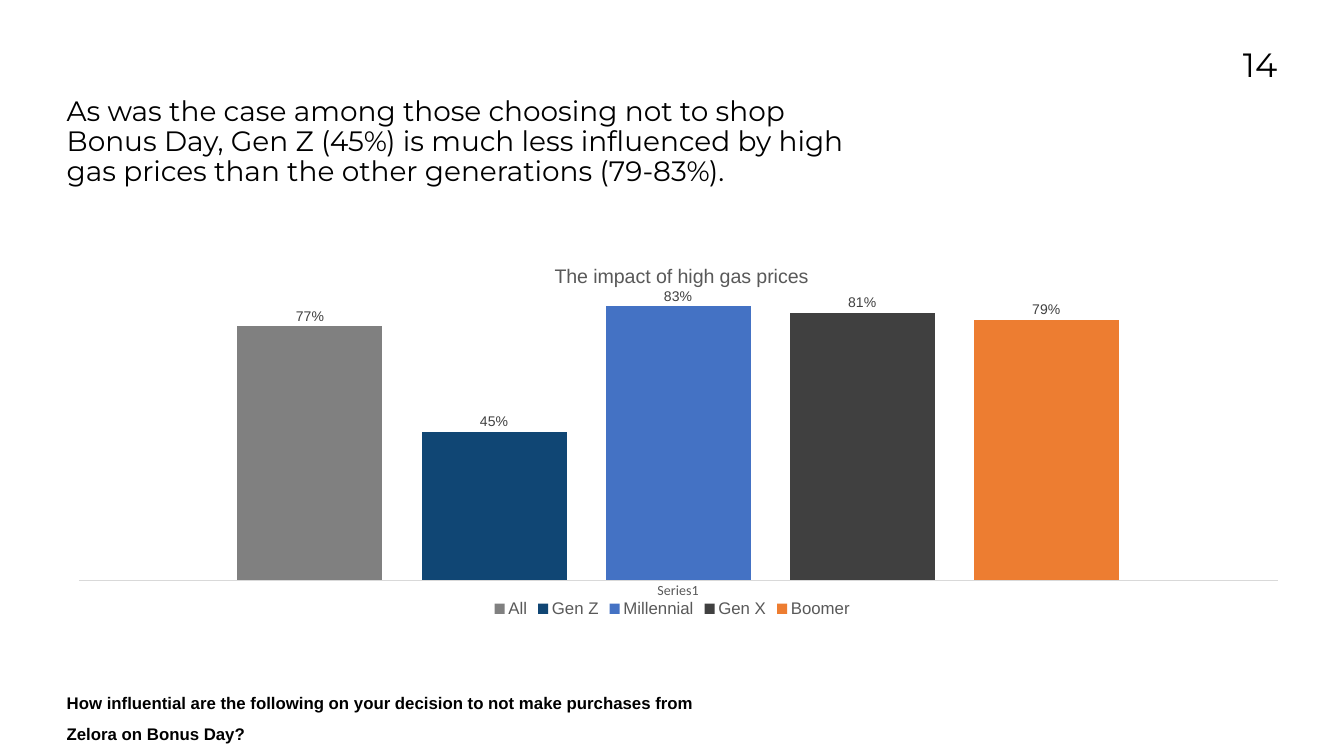
from pptx import Presentation
from pptx.chart.data import CategoryChartData
from pptx.dml.color import RGBColor
from pptx.enum.chart import (XL_CHART_TYPE, XL_LABEL_POSITION,
                             XL_LEGEND_POSITION, XL_TICK_MARK)
from pptx.enum.text import MSO_ANCHOR, MSO_AUTO_SIZE, PP_ALIGN
from pptx.oxml import parse_xml
from pptx.oxml.ns import nsdecls, qn
from pptx.util import Pt

PX = 9525  # EMU per px, at 96 px to the inch
LEFT = 127
COLORS = {"text": "000000", "muted": "595959", "label": "404040", "axis": "D9D9D9"}
GENERATIONS = [
    ("All", 0.77, "808080"),
    ("Gen Z", 0.45, "104674"),
    ("Millennial", 0.83, "4472C4"),
    ("Gen X", 0.81, "404040"),
    ("Boomer", 0.79, "ED7D31"),
]


def set_font(font, name, size, color, bold=False):
    font.name, font.size, font.bold = name, Pt(size), bold
    font.color.rgb = RGBColor.from_string(color)


def fill_text(sp, box, text, name, size, bold=False, spacing=1.0, align=PP_ALIGN.LEFT):
    """Place a text shape at box (px) and give it one formatted paragraph."""
    sp.left, sp.top, sp.width, sp.height = [v * PX for v in box]
    tf = sp.text_frame
    tf.margin_left = tf.margin_right = tf.margin_top = tf.margin_bottom = 0
    tf.word_wrap = True
    tf.auto_size = MSO_AUTO_SIZE.NONE
    tf.vertical_anchor = MSO_ANCHOR.TOP
    p = tf.paragraphs[0]
    p.text = text
    p.alignment = align
    p.line_spacing = spacing
    p.space_before = Pt(0)
    set_font(p.font, name, size, COLORS["text"], bold)


prs = Presentation()
prs.slide_width, prs.slide_height = 2560 * PX, 1440 * PX
s = prs.slides.add_slide(prs.slide_layouts[5])

# Text
fill_text(s.shapes.title, (LEFT, 185, 1537, 200),
          "As was the case among those choosing not to shop Bonus Day, Gen Z (45%) "
          "is much less influenced by high gas prices than the other generations (79-83%).",
          "Montserrat", 40, spacing=0.9)
fill_text(s.shapes.add_textbox(0, 0, 0, 0), (2217, 84, 216, 158),
          "14", "Montserrat", 48, align=PP_ALIGN.RIGHT)
fill_text(s.shapes.add_textbox(0, 0, 0, 0), (LEFT, 1301, 1288, 62),
          "How influential are the following on your decision to not make purchases "
          "from Zelora on Bonus Day?", "Arial", 24, bold=True, spacing=1.5)

# Chart
data = CategoryChartData(number_format="0%")
data.categories = ["Series1"]
for name, value, _ in GENERATIONS:
    data.add_series(name, [value])
chart = s.shapes.add_chart(XL_CHART_TYPE.COLUMN_CLUSTERED, LEFT * PX, 468 * PX,
                           2307 * PX, 716 * PX, data).chart
set_font(chart.font, "Calibri", 10, COLORS["text"])

chart.has_title = True
p = chart.chart_title.text_frame.paragraphs[0]
p.text = "The impact of high gas prices"
set_font(p.font, "Arial", 28, COLORS["muted"])

chart.has_legend = True
chart.legend.position = XL_LEGEND_POSITION.BOTTOM
chart.legend.include_in_layout = False
set_font(chart.legend.font, "Arial", 24, COLORS["muted"])

plot = chart.plots[0]
plot.gap_width, plot.overlap, plot.vary_by_categories = 219, -27, False
for series, (_, _, color) in zip(plot.series, GENERATIONS):
    series.format.fill.solid()
    series.format.fill.fore_color.rgb = RGBColor.from_string(color)
    labels = series.data_labels
    labels.show_value = True
    labels.number_format, labels.number_format_is_linked = "0%", False
    labels.position = XL_LABEL_POSITION.OUTSIDE_END
    set_font(labels.font, "Arial", 20, COLORS["label"])

cat_axis, val_axis = chart.category_axis, chart.value_axis
cat_axis.major_tick_mark = XL_TICK_MARK.NONE
cat_axis.format.line.color.rgb = RGBColor.from_string(COLORS["axis"])
cat_axis.format.line.width = Pt(0.75)
set_font(cat_axis.tick_labels.font, "Calibri", 20, COLORS["muted"])
val_axis.visible = False
val_axis.has_major_gridlines = False
val_axis.minimum_scale, val_axis.maximum_scale = 0, 0.9

# Manual positions of the plot area and the title, as shares of the chart
space = chart.element
layouts = [
    (space.find(".//" + qn("c:plotArea")), 0,
     {"layoutTarget": "inner", "xMode": "edge", "yMode": "edge",
      "x": 0.01, "y": 0.1, "w": 0.99, "h": 0.79}),
    (space.find(".//" + qn("c:title")), 1,
     {"xMode": "edge", "yMode": "edge", "x": 0.4, "y": 0.04}),
]
for parent, index, values in layouts:
    for old in parent.findall(qn("c:layout")):
        parent.remove(old)
    items = "".join(f'<c:{tag} val="{v}"/>' for tag, v in values.items())
    parent.insert(index, parse_xml(
        f'<c:layout {nsdecls("c")}><c:manualLayout>{items}</c:manualLayout></c:layout>'))

prs.save("out.pptx")
